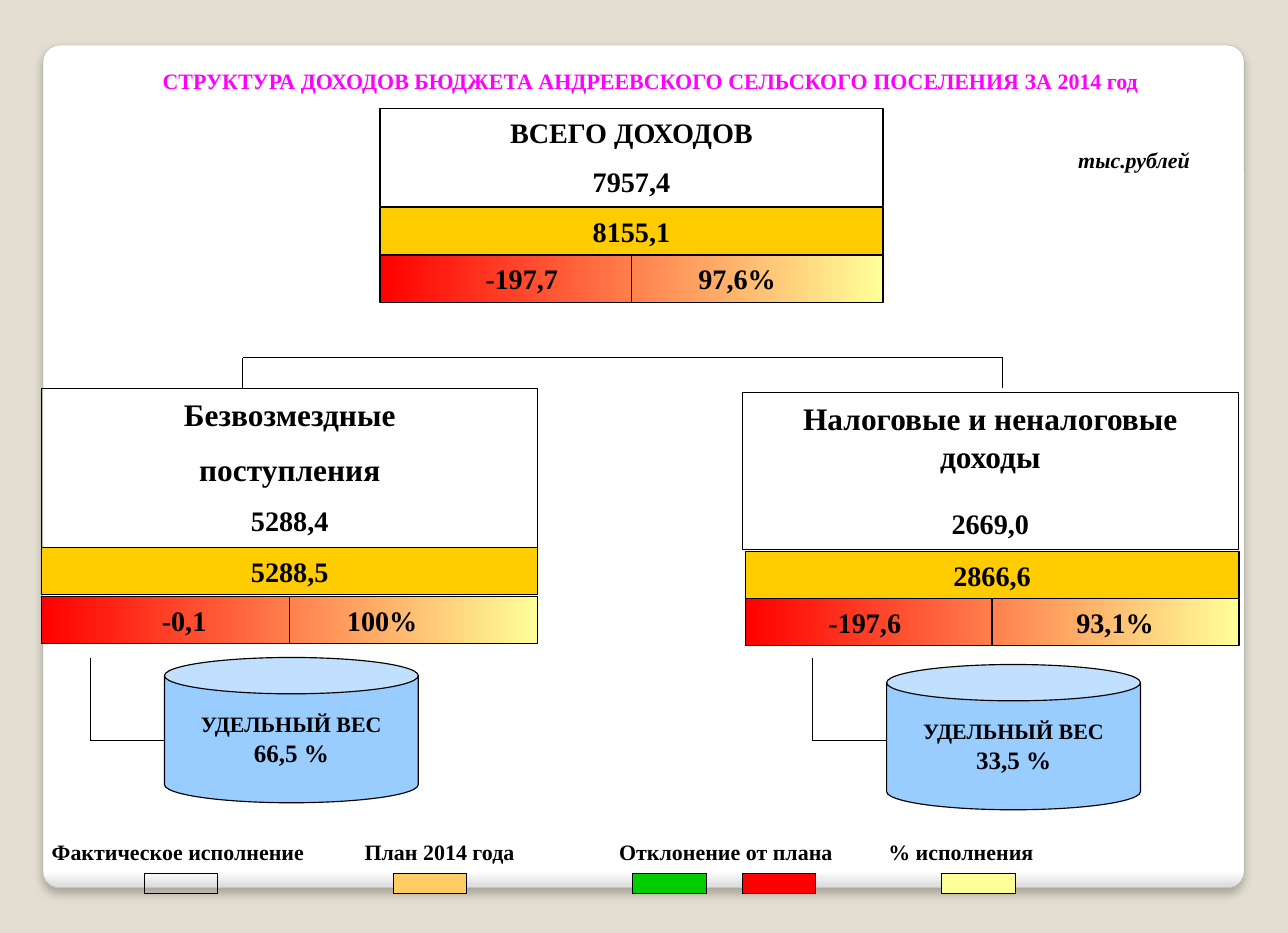
from lxml.etree import SubElement
from pptx import Presentation
from pptx.dml.color import RGBColor
from pptx.enum.shapes import MSO_CONNECTOR, MSO_SHAPE
from pptx.enum.text import MSO_ANCHOR, PP_ALIGN
from pptx.oxml.ns import qn
from pptx.util import Pt

# Content
TITLE = "СТРУКТУРА ДОХОДОВ БЮДЖЕТА АНДРЕЕВСКОГО СЕЛЬСКОГО ПОСЕЛЕНИЯ ЗА 2014 год"
UNIT = "тыс.рублей"

# Each card: head box and lines (text, size, space before), then plan and
# deviation bars with (value, centre) for both halves
CARDS = [
    dict(head=(242.6, 69.1, 321.1, 62.6),
         lines=[("ВСЕГО ДОХОДОВ", 18, 0), ("7957,4", 18, 10)],
         bar=(242.6, 321.1), plan=("8155,1", 132.5),
         diff=162.7, halves=[("-197,7", 333), ("97,6%", 470.5)]),
    dict(head=(26.6, 247.7, 316.8, 101.5),
         lines=[("Безвозмездные", 20, 0), ("поступления", 20, 11),
                ("5288,4", 18, 10)],
         bar=(26.6, 316.8), plan=("5288,5", 349.2),
         diff=380.4, halves=[("-0,1", 117.5), ("100%", 244)]),
    dict(head=(473.8, 250.6, 316.8, 100),
         lines=[("Налоговые и неналоговые доходы", 20, 0), ("2669,0", 18, 20)],
         bar=(475.7, 315.2), plan=("2866,6", 352),
         diff=381.9, halves=[("-197,6", 552), ("93,1%", 711.8)]),
]
# Share, left, top of the can, left of its bracket
SHARES = [("66,5 %", 105, 419.6, 57.6), ("33,5 %", 566, 424.1, 518.4)]
# Label, centre, width
LABELS = [("Фактическое исполнение", 113.6, 180), ("План 2014 года", 280.6, 130),
          ("Отклонение от плана", 463.4, 160), ("% исполнения", 613.4, 120)]
KEYS = [(92.2, None), (251.2, "amber"), (404, "green"), (473.8, "red"),
        (601.2, "pale")]
TREE = dict(left=154.8, right=640.1, top=228.2, foot=247.7)

HEX = dict(back="E3DED1", white="FFFFFF", edge="DADADA", rim="A4A4A4",
           title="FF00FF", ink="000000", gold="FFCC00", blue="99CCFF",
           amber="FFCC66", green="00CC00", red="FF0000", pale="FFFF99")
FONT = "Times New Roman"
BAR = 30.2

deck = Presentation()
deck.slide_width, deck.slide_height = Pt(822.2), Pt(595.4)
slide = deck.slides.add_slide(deck.slide_layouts[6])
slide.background.fill.solid()
slide.background.fill.fore_color.rgb = RGBColor.from_string(HEX["back"])


def tint(name):
    return RGBColor.from_string(HEX[name])


def write(shape, lines, color="ink", align=PP_ALIGN.CENTER, italic=False,
          anchor=MSO_ANCHOR.TOP, wrap=True):
    """Fill a shape with lines of (text, size, space before)."""
    frame = shape.text_frame
    frame.word_wrap, frame.vertical_anchor = wrap, anchor
    frame.margin_left = frame.margin_right = Pt(7.9)
    frame.margin_top = frame.margin_bottom = Pt(4.3)
    for i, (text, size, gap) in enumerate(lines):
        para = frame.add_paragraph() if i else frame.paragraphs[0]
        para.alignment, para.space_before = align, Pt(gap)
        run = para.add_run()
        run.text = text
        font = run.font
        font.name, font.size, font.bold = FONT, Pt(size), True
        font.italic, font.color.rgb = italic, tint(color)


def label(x, y, w, h, text, size=14, **look):
    box = slide.shapes.add_textbox(Pt(x), Pt(y), Pt(w), Pt(h))
    write(box, [(text, size, 0)], **look)


def block(x, y, w, h, fill=None, kind=MSO_SHAPE.RECTANGLE, line="ink", wide=0.75):
    shape = slide.shapes.add_shape(kind, Pt(x), Pt(y), Pt(w), Pt(h))
    shape.shadow.inherit = False
    shape.line.color.rgb, shape.line.width = tint(line), Pt(wide)
    if fill:
        shape.fill.solid()
        shape.fill.fore_color.rgb = tint(fill)
    else:
        shape.fill.background()
    return shape


def blend(shape, angle, stops):
    shape.fill.gradient()
    shape.fill.gradient_angle = angle
    for stop, (place, name) in zip(shape.fill.gradient_stops, stops):
        stop.position, stop.color.rgb = place, tint(name)


def rule(x1, y1, x2, y2):
    line = slide.shapes.add_connector(
        MSO_CONNECTOR.STRAIGHT, Pt(x1), Pt(y1), Pt(x2), Pt(y2))
    line.line.color.rgb, line.line.width = tint("ink"), Pt(0.75)
    SubElement(line._element.spPr, qn("a:effectLst"))
    return line


# Panel with a soft shadow
panel = block(27.4, 28.8, 766.8, 537.8, kind=MSO_SHAPE.ROUNDED_RECTANGLE,
              line="rim", wide=0.16)
panel.adjustments[0] = 0.02
blend(panel, 270, [(0.98, "white"), (1, "edge")])
glow = SubElement(panel._element.spPr.find(qn("a:effectLst")), qn("a:outerShdw"),
                  blurRad=str(Pt(6)), dist=str(Pt(4)), dir="5400000",
                  algn="t", rotWithShape="0")
shade = SubElement(glow, qn("a:srgbClr"), val=HEX["ink"])
SubElement(shade, qn("a:alpha"), val="25000")

# Title and unit
label(44.6, 38.9, 741.6, 25.2, TITLE, color="title")
label(680.4, 89.3, 105.8, 25.2, UNIT, italic=True, align=PP_ALIGN.LEFT)

# Cards
for card in CARDS:
    write(block(*card["head"]), card["lines"])
    x, w = card["bar"]
    value, y = card["plan"]
    write(block(x, y, w, BAR, "gold"), [(value, 18, 0)])
    y = card["diff"]
    bar = block(x, y, w, BAR)
    blend(bar, 0, [(0, "red"), (1, "pale")])
    split = rule(x + w / 2, y, x + w / 2, y + BAR)
    split.begin_connect(bar, 0)
    split.end_connect(bar, 2)
    for value, mid in card["halves"]:
        label(mid - 45, y, 90, BAR, value, size=18)

# Tree from the total to its parts
rule(TREE["left"], TREE["top"], TREE["right"], TREE["top"])
for x in (TREE["left"], TREE["right"]):
    rule(x, TREE["top"], x, TREE["foot"])

# Shares
for share, x, y, side in SHARES:
    can = block(x, y, 162, 92.7, "blue", kind=MSO_SHAPE.CAN)
    write(can, [("УДЕЛЬНЫЙ ВЕС", 14, 0), (share, 16, 0)],
          anchor=MSO_ANCHOR.MIDDLE, wrap=False)
    rule(side, 419.6, side, 472.5)
    rule(side, 472.5, x, 472.5)

# Legend
for text, mid, w in LABELS:
    label(mid - w / 2, 530.6, w, 25.2, text)
for x, fill in KEYS:
    block(x, 557.2, 46.8, 13.2, fill)

deck.save("out.pptx")
